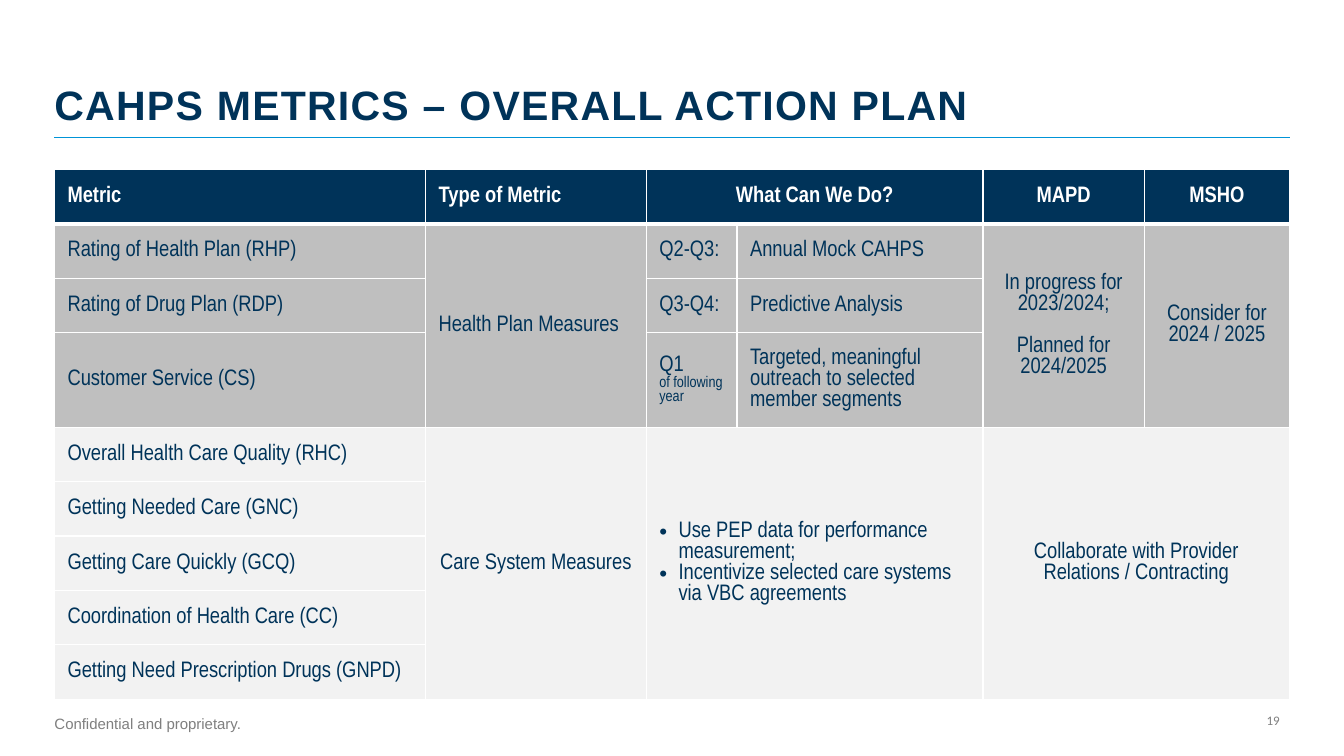
from lxml.etree import SubElement
from pptx import Presentation
from pptx.dml.color import RGBColor
from pptx.enum.shapes import MSO_CONNECTOR
from pptx.enum.text import MSO_ANCHOR, PP_ALIGN
from pptx.oxml.ns import qn
from pptx.util import Inches, Pt

NAVY, WHITE, GRAY = "003359", "FFFFFF", "7F7F7F"
PLAN_FILL, CARE_FILL = "BFBFBF", "F2F2F2"
LEFT, WIDTH = 0.54, 12.25
COLUMN_WIDTHS = [3.68, 2.19, 0.9, 2.44, 1.6, 1.44]
ROW_HEIGHT, TALL_ROW, TALL_HEIGHT = 0.54, 3, 0.93

HEADINGS = {0: "Metric", 1: "Type of Metric", 2: "What Can We Do?", 4: "MAPD", 5: "MSHO"}
METRICS = [
    "Rating of Health Plan (RHP)", "Rating of Drug Plan (RDP)", "Customer Service (CS)",
    "Overall Health Care Quality (RHC)", "Getting Needed Care (GNC)",
    "Getting Care Quickly (GCQ)", "Coordination of Health Care (CC)",
    "Getting Need Prescription Drugs (GNPD)",
]
ACTIONS = [
    ("Q2-Q3:", "Annual Mock CAHPS"),
    ("Q3-Q4:", "Predictive Analysis"),
    ("Q1 ", "Targeted, meaningful outreach to selected member segments"),
]
# First row, first column, last row, last column
MERGES = [(0, 2, 0, 3), (1, 1, 3, 1), (1, 4, 3, 4), (1, 5, 3, 5),
          (4, 1, 8, 1), (4, 2, 8, 3), (4, 4, 8, 5)]


def color(value):
    return RGBColor.from_string(value)


def set_font(font, name, size, value, bold=False):
    font.name, font.size, font.bold = name, Pt(size), bold
    font.color.rgb = color(value)


def add_label(slide, box, text, name, size, value, bold=False, inset=(0, 0)):
    shape = slide.shapes.add_textbox(*map(Inches, box))
    frame = shape.text_frame
    frame.word_wrap = True
    frame.vertical_anchor = MSO_ANCHOR.BOTTOM
    frame.margin_left = frame.margin_right = Inches(inset[0])
    frame.margin_top = frame.margin_bottom = Inches(inset[1])
    paragraph = frame.paragraphs[0]
    paragraph.text = text
    set_font(paragraph.font, name, size, value, bold)
    return paragraph


def add_title(slide, left, top, width, height):
    paragraph = add_label(slide, (left, top, 10.17, height),
                          "CAHPS METRICS – OVERALL ACTION PLAN", "Arial", 29.3, NAVY, True)
    paragraph.line_spacing = 0.9
    paragraph.runs[0].font._element.set("spc", "90")
    # Rule under the title
    rule_top = Inches(top + height + 0.08)
    rule = slide.shapes.add_connector(MSO_CONNECTOR.STRAIGHT, Inches(left), rule_top,
                                      Inches(left + width), rule_top)
    rule.line.color.rgb = color("0094D7")
    rule.line.width = Pt(0.75)
    SubElement(rule._element.spPr, qn("a:effectLst"))


def add_borders(cell, bottom_width):
    properties = cell._tc.get_or_add_tcPr()
    for side, points in zip("LRTB", (1, 1, 1, bottom_width)):
        line = SubElement(properties, qn(f"a:ln{side}"), w=str(Pt(points)))
        SubElement(SubElement(line, qn("a:solidFill")), qn("a:srgbClr"), val=WHITE)


def style_cell(cell, row):
    add_borders(cell, 3 if row == 0 else 1)
    cell.fill.solid()
    cell.fill.fore_color.rgb = color(NAVY if row == 0 else PLAN_FILL if row < 4 else CARE_FILL)
    cell.vertical_anchor = MSO_ANCHOR.MIDDLE
    cell.margin_left = cell.margin_right = Inches(0.13)
    cell.margin_top = cell.margin_bottom = Inches(0.07)


def add_bullet(paragraph):
    properties = paragraph._p.get_or_add_pPr()
    properties.set("marL", str(Inches(0.19)))
    properties.set("indent", str(-Inches(0.19)))
    SubElement(properties, qn("a:buFont"), typeface="Arial")
    SubElement(properties, qn("a:buChar"), char="•")


def write_cell(cell, *lines, centered=False, header=False, bulleted=False, gap=0):
    frame = cell.text_frame
    for index, text in enumerate(lines):
        paragraph = frame.add_paragraph() if index else frame.paragraphs[0]
        paragraph.text = text
        if index and gap:
            paragraph.space_before = Pt(gap)
        if bulleted:
            add_bullet(paragraph)
        if centered:
            paragraph.alignment = PP_ALIGN.CENTER
        set_font(paragraph.font, "Arial Narrow", 16, WHITE if header else NAVY, header)


def add_action_table(slide, left, top, width):
    row_count = len(METRICS) + 1
    height = ROW_HEIGHT * (row_count - 1) + TALL_HEIGHT
    table = slide.shapes.add_table(row_count, len(COLUMN_WIDTHS), Inches(left), Inches(top),
                                   Inches(width), Inches(height)).table
    table.horz_banding = False
    for column, column_width in zip(table.columns, COLUMN_WIDTHS):
        column.width = Inches(column_width)
    for index, row in enumerate(table.rows):
        row.height = Inches(TALL_HEIGHT if index == TALL_ROW else ROW_HEIGHT)
        for cell in row.cells:
            style_cell(cell, index)
    for first_row, first_column, last_row, last_column in MERGES:
        table.cell(first_row, first_column).merge(table.cell(last_row, last_column))

    # Headings, metrics and dated actions
    for column, heading in HEADINGS.items():
        write_cell(table.cell(0, column), heading, centered=column > 1, header=True)
    for row, metric in enumerate(METRICS, 1):
        write_cell(table.cell(row, 0), metric)
    for row, (quarter, action) in enumerate(ACTIONS, 1):
        write_cell(table.cell(row, 2), quarter)
        write_cell(table.cell(row, 3), action)
    quarter_paragraph = table.cell(TALL_ROW, 2).text_frame.paragraphs[0]
    quarter_paragraph.add_line_break()
    note = quarter_paragraph.add_run()
    note.text = "of following year"
    note.font.size = Pt(11)

    # Health plan group
    write_cell(table.cell(1, 1), "Health Plan Measures")
    write_cell(table.cell(1, 4), "In progress for 2023/2024;", "Planned for 2024/2025",
               centered=True, gap=15)
    write_cell(table.cell(1, 5), "Consider for 2024 / 2025", centered=True)

    # Care system group
    write_cell(table.cell(4, 1), "Care System Measures", centered=True)
    write_cell(table.cell(4, 2), "Use PEP data for performance measurement;",
               "Incentivize selected care systems via VBC agreements", bulleted=True)
    write_cell(table.cell(4, 4), "Collaborate with Provider Relations / Contracting",
               centered=True)


def add_footer(slide, left, top, width):
    add_label(slide, (left, top, 2.18, 0.21), "Confidential and proprietary.",
              "Arial", 10.7, GRAY)
    number = add_label(slide, (left + width - 3.11, top + 0.01, 3.11, 0.2), "19",
                       "Calibri", 9.3, GRAY, inset=(0.1, 0.05))
    number.alignment = PP_ALIGN.RIGHT


def main():
    presentation = Presentation()
    presentation.slide_width, presentation.slide_height = Inches(13.33), Inches(7.5)
    slide = presentation.slides.add_slide(presentation.slide_layouts[6])
    add_title(slide, LEFT, 0.16, WIDTH, 1.12)
    add_action_table(slide, LEFT, 1.68, WIDTH)
    add_footer(slide, LEFT, 7.06, WIDTH)
    presentation.save("out.pptx")


if __name__ == "__main__":
    main()
